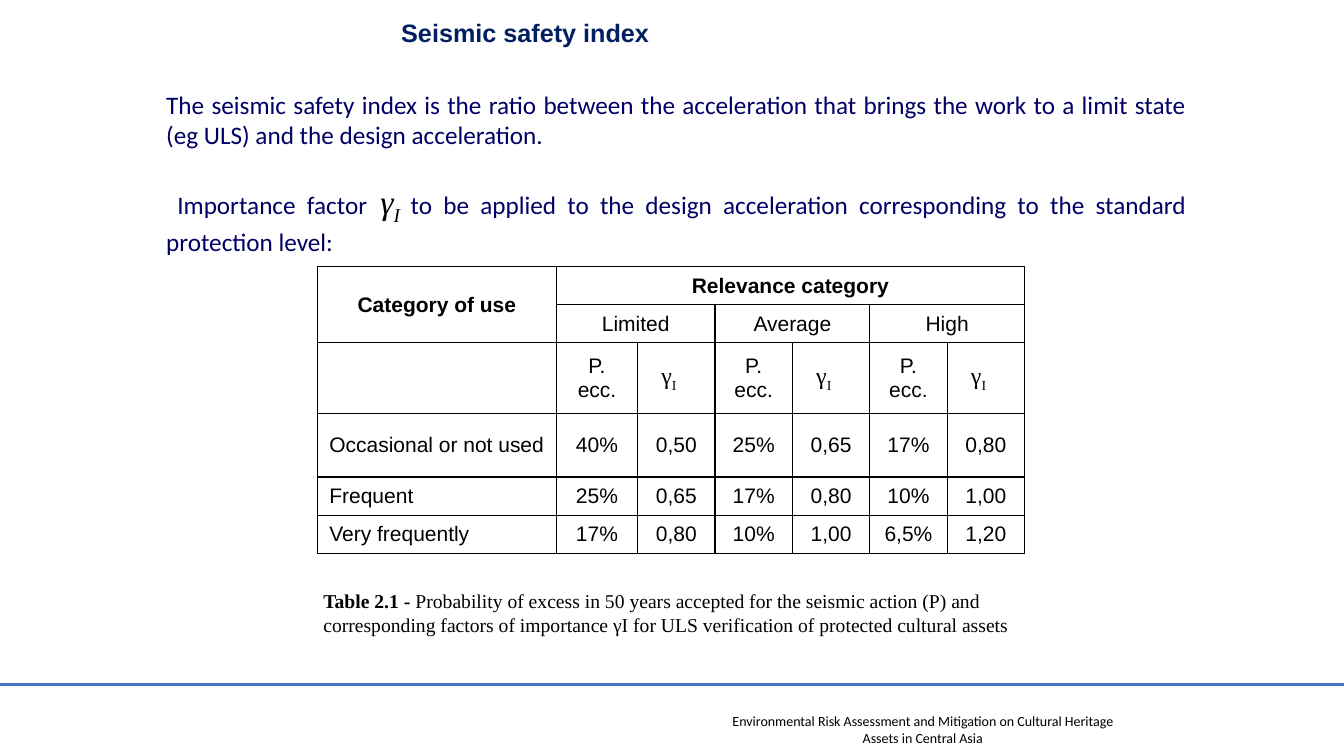
from lxml import etree
from pptx import Presentation
from pptx.dml.color import RGBColor
from pptx.enum import shapes, text
from pptx.oxml import ns
from pptx.util import Cm, Pt

COLORS = {"white": "FFFFFF", "black": "000000", "title": "002060",
          "body": "000066", "rule": "4472C4"}
ALIGN, ANCHOR = text.PP_ALIGN, text.MSO_ANCHOR
SERIF = "Times New Roman"


def add_run(p, words, size, font, color="black", bold=False, italic=False, subscript=False):
    r = p.add_run()
    r.text = words
    r.font.size, r.font.name = Pt(size), font
    r.font.bold, r.font.italic = bold, italic
    r.font.color.rgb = RGBColor.from_string(COLORS[color])
    if subscript:
        r.font._element.set("baseline", "-25000")


def add_text_box(left, top, width, height):
    """Add a wrapping text box, measured in cm, and return its text frame."""
    tf = s.shapes.add_textbox(Cm(left), Cm(top), Cm(width), Cm(height)).text_frame
    tf.word_wrap = True
    return tf


prs = Presentation()
prs.slide_width, prs.slide_height = Cm(33.87), Cm(19.05)
s = prs.slides.add_slide(prs.slide_layouts[6])

# Footer
p = add_text_box(17.83, 17.83, 10.85, 1.11).paragraphs[0]
p.alignment = ALIGN.CENTER
add_run(p, "Environmental Risk Assessment and Mitigation on Cultural Heritage "
        "Assets in Central Asia", 10, "Calibri")

rule = s.shapes.add_connector(shapes.MSO_CONNECTOR.STRAIGHT,
                              0, Cm(17.25), prs.slide_width, Cm(17.25))
rule.line.color.rgb = RGBColor.from_string(COLORS["rule"])
rule.line.width = Pt(2.25)
etree.SubElement(rule._element.spPr, ns.qn("a:effectLst"))

# Title
title = s.shapes.add_shape(shapes.MSO_SHAPE.RECTANGLE, Cm(3.1), 0, Cm(20.27), Cm(1.65))
title.shadow.inherit = False
title.fill.solid()
title.fill.fore_color.rgb = RGBColor.from_string(COLORS["white"])
title.line.color.rgb = RGBColor.from_string(COLORS["white"])
title.line.width = Pt(1)
title.text_frame.vertical_anchor = ANCHOR.MIDDLE
p = title.text_frame.paragraphs[0]
p.alignment = ALIGN.CENTER
add_run(p, "Seismic safety index", 18, "Arial", "title", bold=True)

# Definition and importance factor
tf = add_text_box(3.94, 2.13, 26.21, 4.37)
p = tf.paragraphs[0]
p.alignment = ALIGN.JUSTIFY
add_run(p, "The seismic safety index is the ratio between the acceleration that brings "
        "the work to a limit state (eg ULS) and the design acceleration.",
        18, "Calibri", "body")
p = tf.add_paragraph()
p.alignment = ALIGN.JUSTIFY
p.space_before = Pt(22)
p._p.get_or_add_pPr().set("indent", str(Cm(0.28)))
add_run(p, "Importance factor", 18, "Calibri", "body")
add_run(p, " ", 24, "Calibri", "body")
add_run(p, "γ", 24, SERIF, italic=True)
add_run(p, "I ", 24, SERIF, italic=True, subscript=True)
add_run(p, "to be applied to the design acceleration corresponding to the standard "
        "protection level:", 18, "Calibri", "body")

# Caption
tf = add_text_box(7.9, 14.71, 18.03, 1.45)
tf.vertical_anchor = ANCHOR.MIDDLE
p = tf.paragraphs[0]
add_run(p, "Table 2.1 - ", 14, SERIF, bold=True)
add_run(p, "Probability of excess in 50 years accepted for the seismic action (P) and "
        "corresponding factors of importance γI for ULS verification of protected "
        "cultural assets", 14, SERIF)

# Importance factor table
rows = [
    ["Category of use", "Relevance category", "", "", "", "", ""],
    ["", "Limited", "", "Average", "", "High", ""],
    [""] + ["P. ecc.", "γ"] * 3,
    ["Occasional or not used", "40%", "0,50", "25%", "0,65", "17%", "0,80"],
    ["Frequent", "25%", "0,65", "17%", "0,80", "10%", "1,00"],
    ["Very frequently", "17%", "0,80", "10%", "1,00", "6,5%", "1,20"],
]
col_widths = [6.02, 2.05] + [1.95] * 5
row_heights = [0.96, 0.96, 1.78, 1.6, 0.96, 0.96]
table = s.shapes.add_table(len(rows), len(col_widths), Cm(8), Cm(6.72),
                           Cm(sum(col_widths)), Cm(sum(row_heights))).table
for column, width in zip(table.columns, col_widths):
    column.width = Cm(width)
for row, height in zip(table.rows, row_heights):
    row.height = Cm(height)

for i, row in enumerate(rows):
    for j, label in enumerate(row):
        cell = table.cell(i, j)
        cell.vertical_anchor = ANCHOR.MIDDLE
        cell.margin_left = cell.margin_right = Cm(0.3)
        cell.margin_top = cell.margin_bottom = Cm(0.15)
        tcPr = cell._tc.get_or_add_tcPr()
        for side in ("lnL", "lnR", "lnT", "lnB"):
            ln = etree.SubElement(tcPr, ns.qn(f"a:{side}"), w=str(Pt(1)))
            line_fill = etree.SubElement(ln, ns.qn("a:solidFill"))
            etree.SubElement(line_fill, ns.qn("a:srgbClr"), val=COLORS["black"])
        cell.fill.solid()
        cell.fill.fore_color.rgb = RGBColor.from_string(COLORS["white"])
        p = cell.text_frame.paragraphs[0]
        if label == "γ":
            cell.margin_left = Cm(0.6)
            add_run(p, label, 17, SERIF)
            add_run(p, "I", 17, SERIF, subscript=True)
        elif label:
            p.alignment = ALIGN.LEFT if j == 0 and i > 2 else ALIGN.CENTER
            add_run(p, label, 15, "Arial", bold=i == 0)

table.cell(0, 0).merge(table.cell(1, 0))
table.cell(0, 1).merge(table.cell(0, 6))
for j in (1, 3, 5):
    table.cell(1, j).merge(table.cell(1, j + 1))

prs.save("out.pptx")
